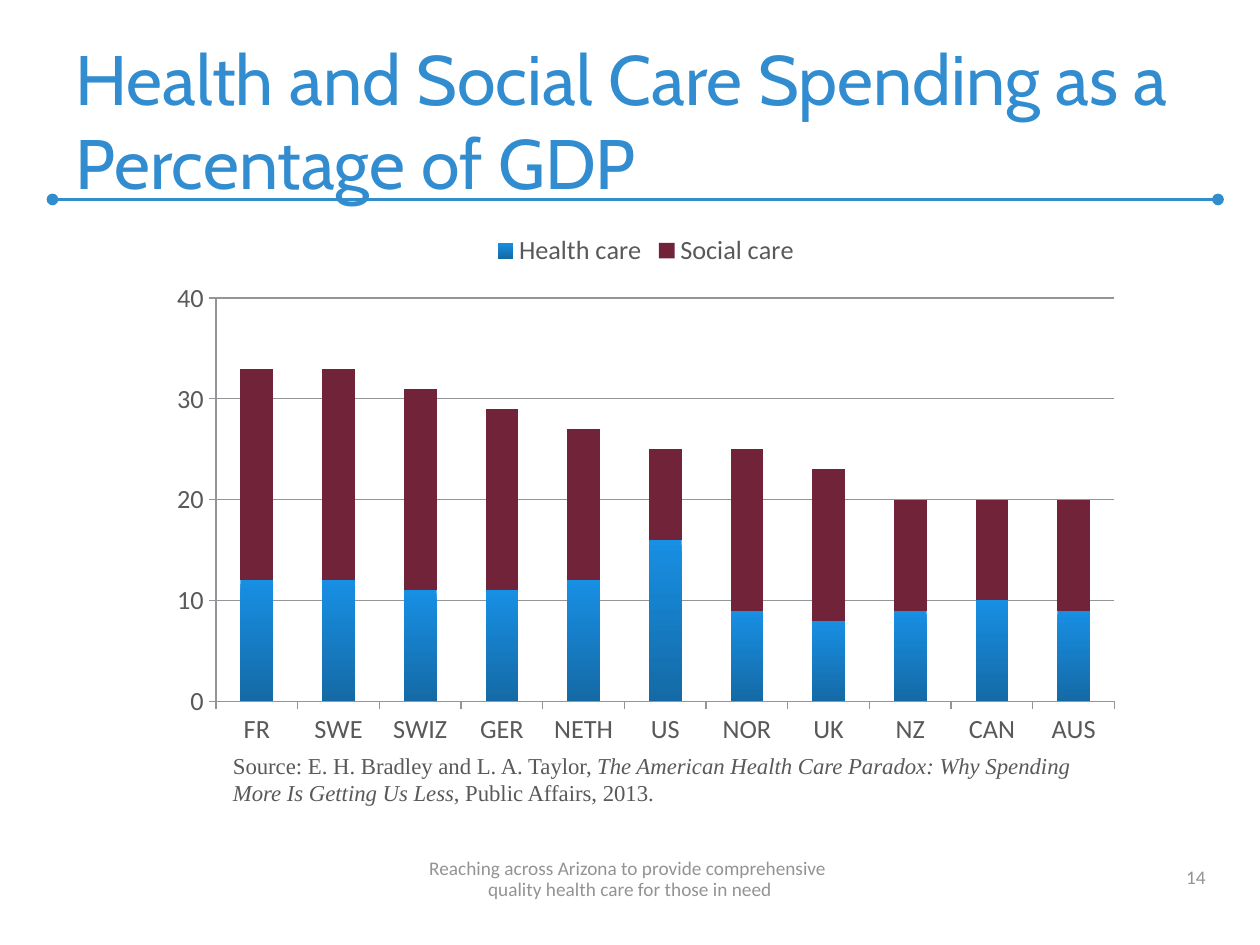
from dataclasses import dataclass

from lxml.etree import SubElement
from pptx import Presentation
from pptx.chart.data import CategoryChartData
from pptx.dml.color import RGBColor
from pptx.enum.chart import XL_CHART_TYPE, XL_LEGEND_POSITION, XL_TICK_MARK
from pptx.enum.shapes import MSO_CONNECTOR
from pptx.enum.text import MSO_ANCHOR, MSO_AUTO_SIZE, PP_ALIGN
from pptx.oxml.ns import qn
from pptx.util import Pt


@dataclass(frozen=True)
class Theme:
    title: RGBColor = RGBColor.from_string("318DCF")
    rule: RGBColor = RGBColor.from_string("318DCC")
    text: RGBColor = RGBColor.from_string("595959")
    muted: RGBColor = RGBColor.from_string("939393")
    grid: RGBColor = RGBColor.from_string("939598")
    health_top: RGBColor = RGBColor.from_string("178FE3")
    health_bottom: RGBColor = RGBColor.from_string("156AA6")
    social: RGBColor = RGBColor.from_string("702339")
    title_size: Pt = Pt(40)
    chart_size: Pt = Pt(15)
    source_size: Pt = Pt(13)
    footer_size: Pt = Pt(11)


THEME = Theme()
COUNTRIES = ["FR", "SWE", "SWIZ", "GER", "NETH", "US", "NOR", "UK", "NZ", "CAN", "AUS"]
SPENDING = {
    "Health care": [12, 12, 11, 11, 12, 16, 9, 8, 9, 10, 9],
    "Social care": [21, 21, 20, 18, 15, 9, 16, 15, 11, 10, 11],
}


def apply(target, values):
    for name, value in values.items():
        setattr(target, name, value)


def format_font(font, name, size, color, **extra):
    apply(font, {"name": name, "size": size, **extra})
    font.color.rgb = color


def add_title(s, text, box):
    sp = s.shapes.title
    apply(sp, dict(zip(("left", "top", "width", "height"), map(Pt, box))))
    tf = sp.text_frame
    tf.text = text
    apply(tf, {"word_wrap": True, "auto_size": MSO_AUTO_SIZE.NONE,
               "vertical_anchor": MSO_ANCHOR.BOTTOM})
    p = tf.paragraphs[0]
    p.alignment = PP_ALIGN.LEFT
    format_font(p.runs[0].font, "Cabin", THEME.title_size, THEME.title)


def add_text(s, box, runs, font, size, color, anchor=MSO_ANCHOR.TOP, **paragraph):
    tf = s.shapes.add_textbox(*map(Pt, box)).text_frame
    apply(tf, {"word_wrap": True, "vertical_anchor": anchor})
    p = tf.paragraphs[0]
    apply(p, paragraph)
    for text, italic in runs:
        if text == "\n":
            p.add_line_break()
            continue
        r = p.add_run()
        r.text = text
        format_font(r.font, font, size, color, italic=italic)


def add_rule(s, left, right, y):
    line = s.shapes.add_connector(MSO_CONNECTOR.STRAIGHT, Pt(left), Pt(y), Pt(right), Pt(y))
    line.line.color.rgb = THEME.rule
    line.line.width = Pt(2.25)
    ln = line.line._get_or_add_ln()
    for end in ("a:headEnd", "a:tailEnd"):
        SubElement(ln, qn(end), type="oval")
    SubElement(line._element.spPr, qn("a:effectLst"))


def format_axis(axis):
    apply(axis, {"major_tick_mark": XL_TICK_MARK.OUTSIDE, "minor_tick_mark": XL_TICK_MARK.NONE})
    axis.format.line.color.rgb = THEME.grid
    format_font(axis.tick_labels.font, "Calibri", THEME.chart_size, THEME.text)


def add_spending_chart(s, box):
    data = CategoryChartData()
    data.categories = COUNTRIES
    for name, values in SPENDING.items():
        data.add_series(name, values)
    chart = s.shapes.add_chart(XL_CHART_TYPE.COLUMN_STACKED, *map(Pt, box), data).chart
    format_font(chart.font, "Calibri", THEME.chart_size, THEME.text)
    apply(chart, {"has_title": False, "has_legend": True})
    apply(chart.legend, {"position": XL_LEGEND_POSITION.TOP, "include_in_layout": False})
    format_font(chart.legend.font, "Calibri", THEME.chart_size, THEME.text)
    for axis in (chart.category_axis, chart.value_axis):
        format_axis(axis)
    apply(chart.value_axis, {"minimum_scale": 0, "maximum_scale": 40, "major_unit": 10,
                             "has_major_gridlines": True})
    chart.value_axis.major_gridlines.format.line.color.rgb = THEME.grid
    plot = chart.plots[0]
    apply(plot, {"gap_width": 150, "overlap": 100, "vary_by_categories": False})
    health, social = (series.format.fill for series in plot.series)
    health.gradient()
    health.gradient_angle = 270
    for stop, color in zip(health.gradient_stops, (THEME.health_top, THEME.health_bottom)):
        stop.color.rgb = color
    social.solid()
    social.fore_color.rgb = THEME.social


def main():
    prs = Presentation()
    apply(prs, {"slide_width": Pt(720), "slide_height": Pt(540)})
    s = prs.slides.add_slide(prs.slide_layouts[5])
    add_rule(s, 30, 696, 114)
    add_title(s, "Health and Social Care Spending as a Percentage of GDP", (36, 24, 654, 96))
    muted = ("Calibri", THEME.footer_size, THEME.muted, MSO_ANCHOR.BOTTOM)
    add_text(s, (528, 488, 168, 23), [("14", False)], *muted, alignment=PP_ALIGN.RIGHT)
    footer = [("Reaching across Arizona to provide comprehensive ", False), ("\n", False),
              ("quality health care for those in need", False)]
    add_text(s, (0, 488, 720, 30), footer, *muted,
             alignment=PP_ALIGN.CENTER, line_spacing=Pt(12))
    add_spending_chart(s, (90, 126, 558, 306))
    source = [("Source: E. H. Bradley and L. A. Taylor, ", False),
              ("The American Health Care Paradox: Why Spending More Is Getting Us Less", True),
              (", Public Affairs, 2013.", False)]
    add_text(s, (126, 426, 522, 39), source, "Times New Roman", THEME.source_size, THEME.text)
    prs.save("out.pptx")


if __name__ == "__main__":
    main()
